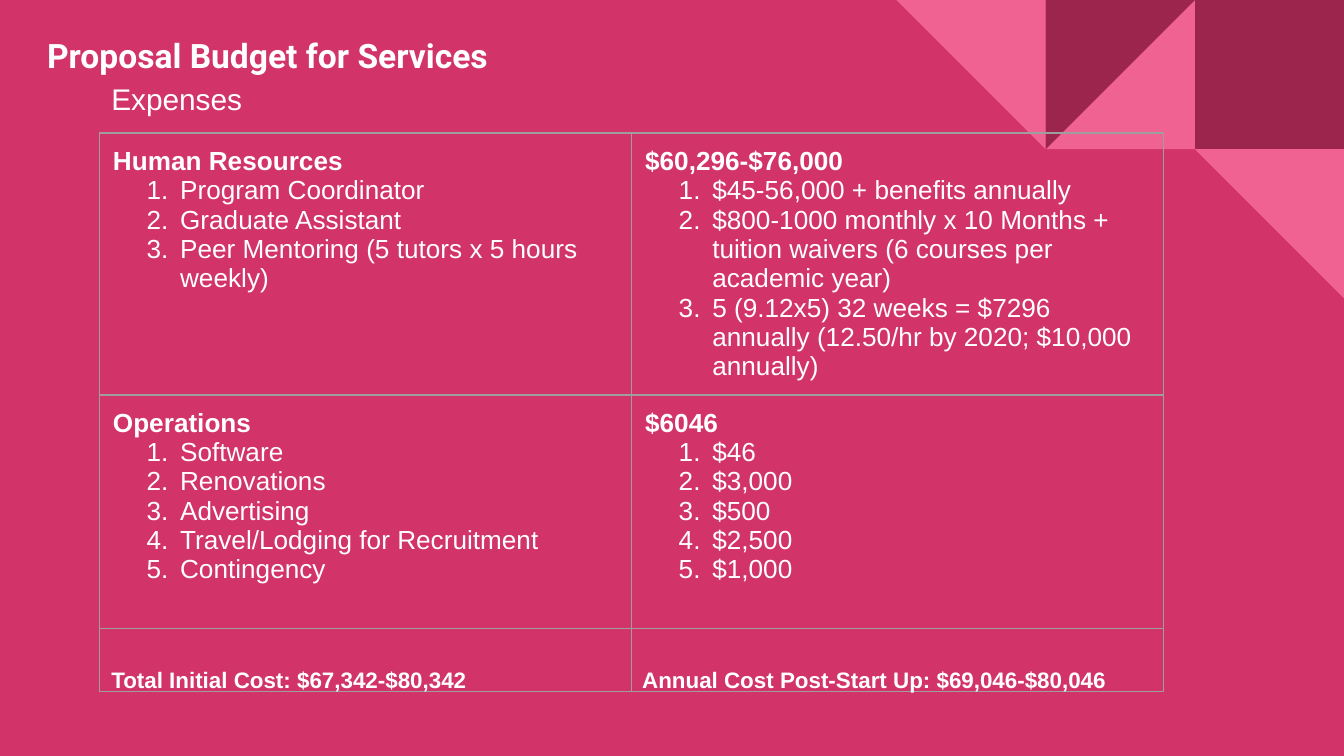
from lxml import etree
from pptx import Presentation
from pptx.dml.color import RGBColor
from pptx.enum.shapes import MSO_SHAPE
from pptx.enum.text import MSO_ANCHOR, MSO_AUTO_SIZE, PP_ALIGN
from pptx.oxml.ns import qn
from pptx.util import Inches, Pt

SQUARE, TRIANGLE = MSO_SHAPE.RECTANGLE, MSO_SHAPE.RIGHT_TRIANGLE
LEFT, MIDDLE, NO_AUTOFIT = PP_ALIGN.LEFT, MSO_ANCHOR.MIDDLE, MSO_AUTO_SIZE.NONE
COLORS = {
    "background": "D23369",
    "dark": "9C254D",
    "light": "F06292",
    "text": "FFFFFF",
    "border": "9E9E9E",
}


def style(paragraph, size, bold=False, name="Arial"):
    paragraph.alignment = LEFT
    paragraph.font.size = Pt(size)
    paragraph.font.bold = bold
    paragraph.font.name = name
    paragraph.font.color.rgb = RGBColor.from_string(COLORS["text"])


def add_color(parent, color):
    etree.SubElement(parent, qn("a:srgbClr"), val=COLORS[color])


deck = Presentation()
deck.slide_width = Inches(10)
deck.slide_height = Inches(10) * 9 // 16
page = deck.slides.add_slide(deck.slide_layouts[5])
page.background.fill.solid()
page.background.fill.fore_color.rgb = RGBColor.from_string(COLORS["background"])

TILE = 1.11
tiles = [
    (SQUARE, 1, 0, 0, "dark"),
    (TRIANGLE, 2, 0, 270, "light"),
    (TRIANGLE, 2, 0, 90, "dark"),
    (TRIANGLE, 3, 0, 180, "light"),
    (TRIANGLE, 1, 1, 180, "light"),
]
for kind, columns_from_right, row, rotation, color in tiles:
    tile = page.shapes.add_shape(
        kind, Inches(10 - columns_from_right * TILE), Inches(row * TILE),
        Inches(TILE), Inches(TILE))
    tile.rotation = rotation
    tile.shadow.inherit = False
    tile.fill.solid()
    tile.fill.fore_color.rgb = RGBColor.from_string(COLORS[color])
    tile.line.fill.background()

title = page.shapes.title
title.left, title.top = Inches(0.25), Inches(0)
title.width, title.height = Inches(6.85), Inches(0.82)
title.text_frame.text = "Proposal Budget for Services"
title.text_frame.auto_size = NO_AUTOFIT
title.text_frame.vertical_anchor = MIDDLE
style(title.text_frame.paragraphs[0], 18, True, "Roboto")

budget = [
    [
        ["Human Resources", "Program Coordinator", "Graduate Assistant",
         "Peer Mentoring (5 tutors x 5 hours weekly)"],
        ["$60,296-$76,000", "$45-56,000 + benefits annually",
         "$800-1000 monthly x 10 Months + tuition waivers (6 courses per academic year)",
         "5 (9.12x5) 32 weeks = $7296 annually (12.50/hr by 2020; $10,000 annually)"],
    ],
    [
        ["Operations", "Software", "Renovations", "Advertising",
         "Travel/Lodging for Recruitment", "Contingency"],
        ["$6046", "$46", "$3,000", "$500", "$2,500", "$1,000"],
    ],
    [[""], [""]],
]
row_heights = [1.94, 1.74, 0.47]
table = page.shapes.add_table(
    len(budget), 2, Inches(0.74), Inches(0.99),
    Inches(7.92), Inches(sum(row_heights))).table
table.first_row = table.horz_banding = False
for column in table.columns:
    column.width = Inches(3.96)

for row, height, contents in zip(table.rows, row_heights, budget):
    row.height = Inches(height)
    for cell, lines in zip(row.cells, contents):
        cell.margin_left = cell.margin_right = Inches(0.1)
        cell.margin_top = cell.margin_bottom = Inches(0.1)
        cell.text_frame.text = "\n".join(lines)
        for index, para in enumerate(cell.text_frame.paragraphs):
            style(para, 14, index == 0)
            if index:
                properties = para._p.get_or_add_pPr()
                properties.set("marL", str(Inches(0.5)))
                properties.set("indent", str(Inches(-0.25)))
                bullet_color = etree.Element(qn("a:buClr"))
                add_color(bullet_color, "text")
                numbering = etree.Element(qn("a:buAutoNum"), type="arabicPeriod")
                properties.insert(0, bullet_color)
                properties.insert(1, numbering)
        cell_properties = cell._tc.get_or_add_tcPr()
        for side in ("lnL", "lnR", "lnT", "lnB"):
            border = etree.SubElement(
                cell_properties, qn("a:" + side), w=str(Pt(0.75)))
            add_color(etree.SubElement(border, qn("a:solidFill")), "border")
        cell.fill.background()

labels = [
    ("Expenses", 0.73, 0.5, 3.04, 16, False),
    ("Total Initial Cost: $67,342-$80,342", 0.73, 4.86, 3.04, 12, True),
    ("Annual Cost Post-Start Up: $69,046-$80,046", 4.68, 4.86, 5.17, 12, True),
]
for text, left, top, width, size, bold in labels:
    box = page.shapes.add_textbox(
        Inches(left), Inches(top), Inches(width), Inches(0.24))
    frame = box.text_frame
    frame.word_wrap = True
    frame.margin_left = frame.margin_right = Inches(0.1)
    frame.margin_top = frame.margin_bottom = Inches(0.1)
    frame.text = text
    style(frame.paragraphs[0], size, bold)

deck.save("out.pptx")
